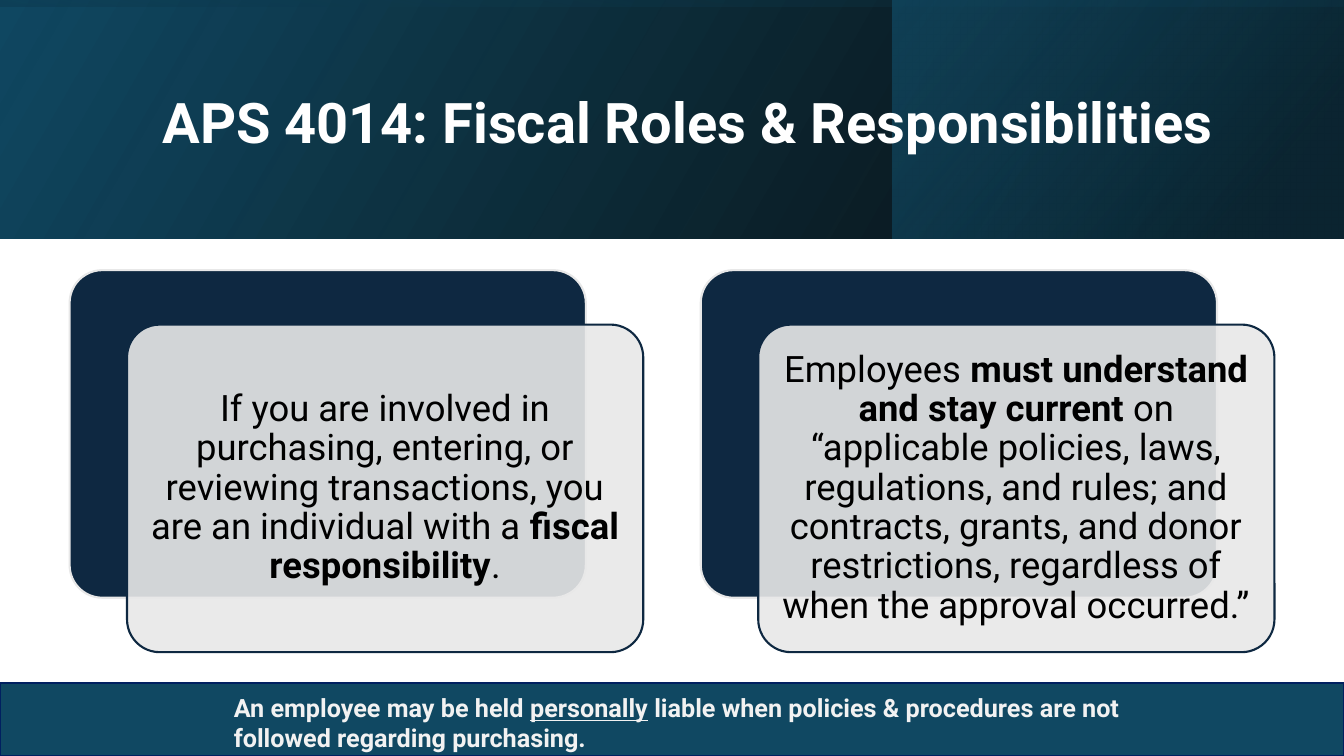
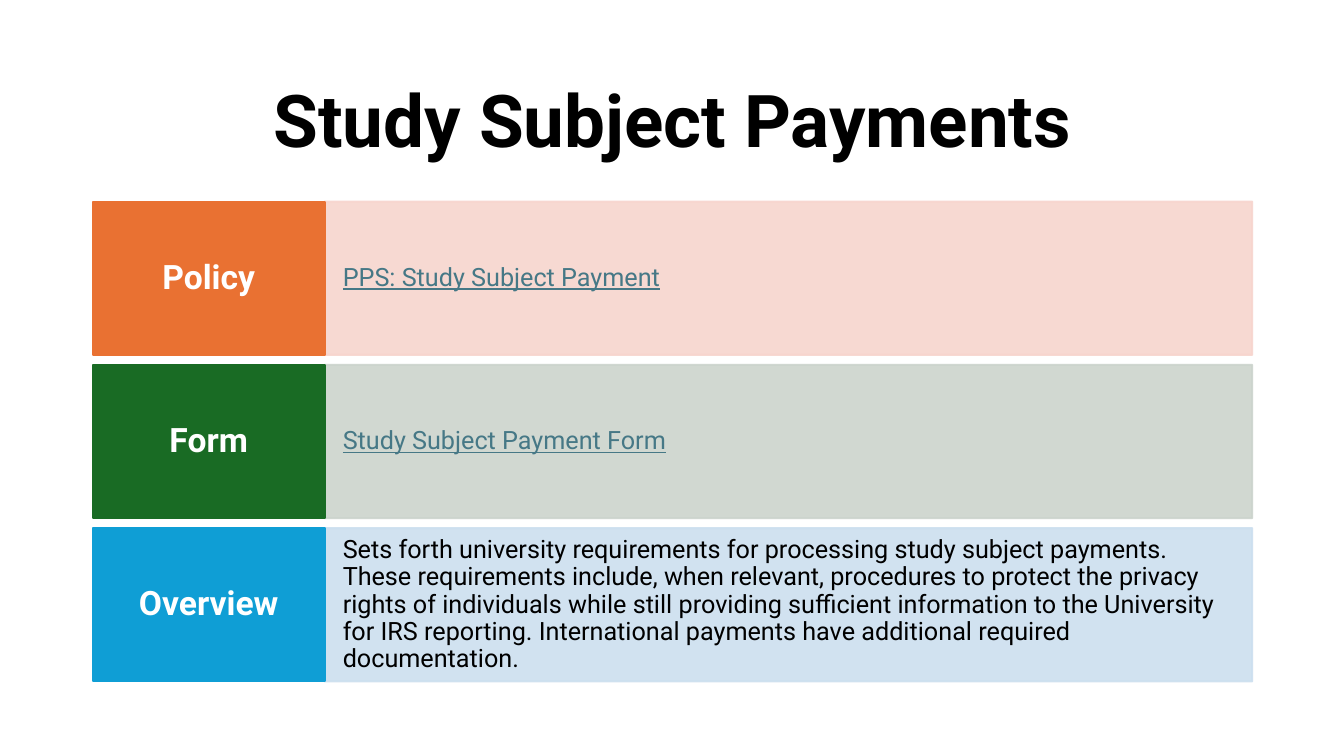
from collections import namedtuple

from lxml import etree
from pptx import Presentation
from pptx import util as u
from pptx.dml.color import RGBColor
from pptx.enum import shapes, text
from pptx.oxml.ns import qn

WIDTH, HEIGHT = 13.33, 7.5
FONT = "Roboto"
COLORS = {
    "black": "000000", "white": "FFFFFF", "navy": "0E2841", "mist": "E8E8E8",
    "petrol": "104862", "deep": "0B3041", "teal": "156082",
    "edge": "002060", "pale": "F2F2F2", "link": "467886",
    "orange": "E97132", "peach": "F7D5CE", "green": "196B24",
    "sage": "CCD4CD", "blue": "0F9ED5", "sky": "CCDFEF",
}
Box = namedtuple("Box", "left top width height")
CENTER, LEFT = text.PP_ALIGN.CENTER, text.PP_ALIGN.LEFT
MIDDLE, TOP = text.MSO_ANCHOR.MIDDLE, text.MSO_ANCHOR.TOP
RECT = shapes.MSO_SHAPE.RECTANGLE
ROUNDED = shapes.MSO_SHAPE.ROUNDED_RECTANGLE


def rgb(name):
    return RGBColor.from_string(COLORS[name])


def inches(box):
    return [u.Inches(value) for value in box]


def set_opacity(shape, percents):
    colors = list(shape._element.spPr.iter(qn("a:srgbClr")))
    for color, percent in zip(colors, percents):
        alpha = etree.SubElement(color, qn("a:alpha"))
        alpha.set("val", str(percent * 1000))


def add_panel(slide, box, fill, line, kind=RECT, opacity=()):
    panel = slide.shapes.add_shape(kind, *inches(box))
    panel.shadow.inherit = False
    if kind == ROUNDED:
        panel.adjustments[0] = 0.1
    panel.fill.solid()
    panel.fill.fore_color.rgb = rgb(fill)
    panel.line.color.rgb = rgb(line)
    panel.line.width = u.Pt(1.5)
    set_opacity(panel, opacity)
    return panel


def write(shape, runs, size, color, bold=False, underline=None, align=CENTER,
          anchor=MIDDLE, spacing=0.9, insets=(0.1, 0.05, 0.1, 0.05)):
    frame = shape.text_frame
    frame.word_wrap = True
    frame.auto_size = text.MSO_AUTO_SIZE.NONE
    frame.vertical_anchor = anchor
    (frame.margin_left, frame.margin_top,
     frame.margin_right, frame.margin_bottom) = inches(insets)
    paragraph = frame.paragraphs[0]
    paragraph.alignment = align
    paragraph.line_spacing = spacing
    font = paragraph.font
    font.name, font.size, font.bold = FONT, u.Pt(size), bold
    font.underline = underline
    font.color.rgb = rgb(color)
    for words, emphasis in runs:
        run = paragraph.add_run()
        run.text = words
        if emphasis:
            setattr(run.font, emphasis, True)


def add_title(slide, box, words, size, color, align):
    title = slide.shapes.title
    title.left, title.top, title.width, title.height = inches(box)
    write(title, [(words, None)], size, color, bold=True, align=align)
    title._element.getparent().append(title._element)


def add_gradient(slide, box, angle, stops, rotation=0):
    band = slide.shapes.add_shape(RECT, *inches(box))
    band.shadow.inherit = False
    band.line.fill.background()
    band.rotation = rotation
    band._element.spPr.xfrm.set("flipH", "1")
    band.fill.gradient()
    band.fill.gradient_angle = 360 - angle
    for stop, (position, color, _) in zip(band.fill.gradient_stops, stops):
        stop.position = position
        stop.color.rgb = rgb(color)
    set_opacity(band, [percent for _, _, percent in stops])


def add_header(slide, box):
    add_gradient(slide, box, 330, [(0, "black", 96), (1, "petrol", 100)])
    side = box.width * 0.3363
    add_gradient(slide, box._replace(left=box.left + box.width - side, width=side),
                 320, [(0.19, "deep", 68), (1, "teal", 48)])
    center_x = box.left + box.width / 2
    center_y = box.top + box.height / 2
    upright = Box(center_x - box.height / 2, center_y - box.width / 2,
                  box.height, box.width)
    add_gradient(slide, upright, 350,
                 [(0.23, "petrol", 16), (0.99, "black", 45)], rotation=270)


def add_card(slide, box, runs):
    offset_x, offset_y = 0.57, 0.54
    back = Box(box.left, box.top, box.width - offset_x, box.height - offset_y)
    front = back._replace(left=box.left + offset_x, top=box.top + offset_y)
    add_panel(slide, back, "navy", "mist", ROUNDED)
    card = add_panel(slide, front, "mist", "navy", ROUNDED, (90,))
    write(card, runs, 26, "black", insets=(0.11,) * 4)


def add_footer(slide, box, runs):
    bar = add_panel(slide, box, "petrol", "edge")
    write(bar, runs, 18, "pale", bold=True, align=LEFT, anchor=TOP, spacing=1,
          insets=(0.174 * box.width, 0.09, 0.13 * box.width, 0))


def add_row(slide, box, label, label_color, words, tint, is_link):
    label_width = box.width * 0.2
    detail = add_panel(
        slide, Box(box.left + label_width, box.top, box.width - label_width, box.height),
        tint, tint, opacity=(90, 90))
    write(detail, [(words, None)], 18, "link" if is_link else "black",
          underline=is_link, align=LEFT, insets=(0.18, 0.05, 0.18, 0.05))
    heading = add_panel(slide, box._replace(width=label_width), label_color, label_color)
    write(heading, [(label, None)], 24, "white", bold=True)


def build_roles(slide):
    add_header(slide, Box(0, 0, WIDTH, 2.37))
    add_title(slide, Box(1.51, 0.38, 10.63, 1.72),
              "APS 4014: Fiscal Roles & Responsibilities", 40, "white", LEFT)
    cards = [
        [("If you are involved in purchasing, entering, or reviewing transactions, "
          "you are an individual with a ", None),
         ("fiscal responsibility", "bold"), (".", None)],
        [("Employees ", None), ("must understand and stay current ", "bold"),
         ("on “applicable policies, laws, regulations, and rules; and contracts, "
          "grants, and donor restrictions, regardless of when the approval "
          "occurred.”", None)],
    ]
    for column, runs in enumerate(cards):
        add_card(slide, Box(0.69 + column * 6.26, 2.68, 5.69, 3.79), runs)
    add_footer(slide, Box(0, 6.78, WIDTH, HEIGHT - 6.78), [
        ("An employee may be held ", None), ("personally", "underline"),
        (" liable when policies & procedures are not followed regarding purchasing.",
         None)])


def build_payments(slide):
    add_title(slide, Box(0.92, 0.61, 11.5, 1.24),
              "Study Subject Payments", 52, "black", CENTER)
    rows = [
        ("Policy", "orange", "PPS: Study Subject Payment", "peach", True),
        ("Form", "green", "Study Subject Payment Form", "sage", True),
        ("Overview", "blue",
         "Sets forth university requirements for processing study subject payments. "
         "These requirements include, when relevant, procedures to protect the "
         "privacy rights of individuals while still providing sufficient information "
         "to the University for IRS reporting. International payments have "
         "additional required documentation.", "sky", False),
    ]
    height, gap = 1.52, 0.1
    for index, row in enumerate(rows):
        add_row(slide, Box(0.92, 2 + index * (height + gap), 11.5, height), *row)


def main():
    deck = Presentation()
    deck.slide_width, deck.slide_height = u.Inches(WIDTH), u.Inches(HEIGHT)
    for build in (build_roles, build_payments):
        build(deck.slides.add_slide(deck.slide_layouts[5]))
    deck.save("out.pptx")


if __name__ == "__main__":
    main()
